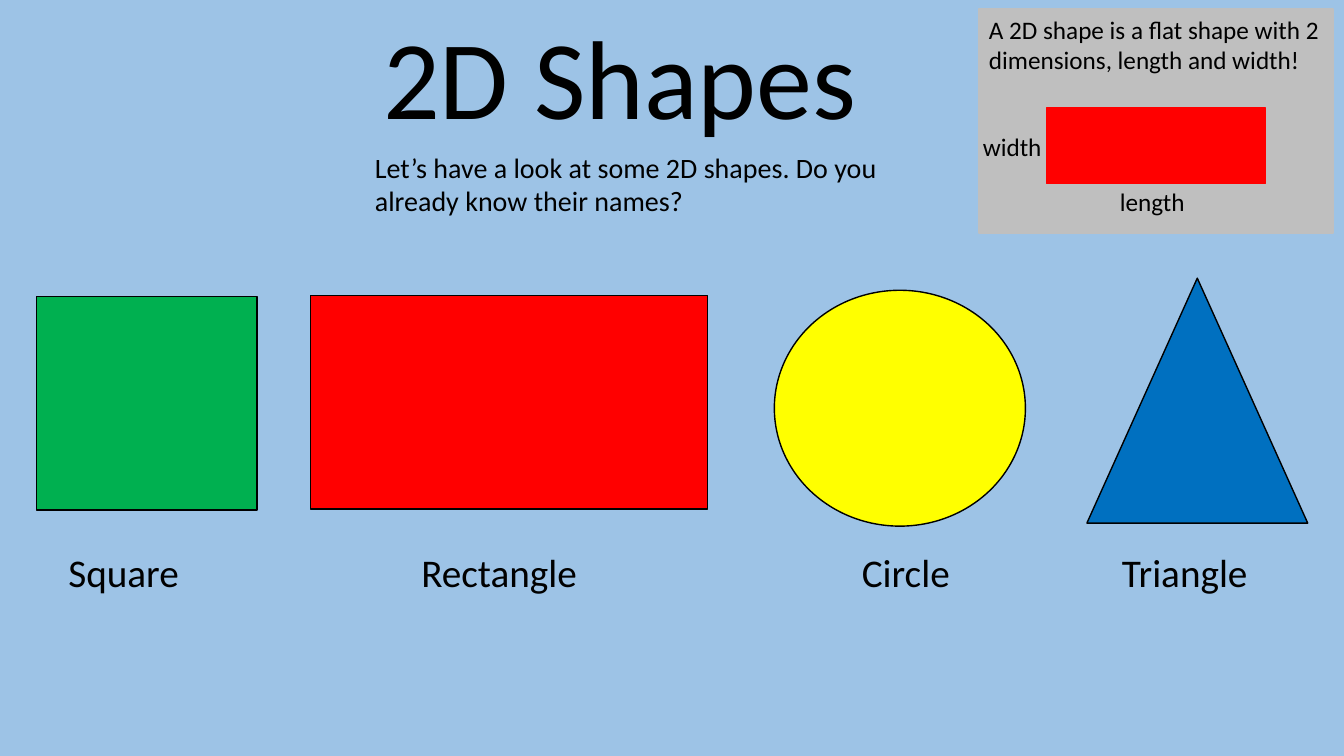
from dataclasses import dataclass

from pptx import Presentation
from pptx.dml.color import RGBColor
from pptx.enum.shapes import MSO_SHAPE
from pptx.enum.text import MSO_ANCHOR, MSO_AUTO_SIZE, PP_ALIGN
from pptx.util import Inches, Pt

RECT = MSO_SHAPE.RECTANGLE
OVAL = MSO_SHAPE.OVAL
TRIANGLE = MSO_SHAPE.ISOSCELES_TRIANGLE
TOP = MSO_ANCHOR.TOP
NO_FIT = MSO_AUTO_SIZE.NONE
LEFT, CENTER = PP_ALIGN.LEFT, PP_ALIGN.CENTER


@dataclass(frozen=True)
class Theme:
    font: str = "Calibri"
    back: str = "9DC3E6"
    panel: str = "BFBFBF"
    ink: str = "000000"
    red: str = "FF0000"
    green: str = "00B050"
    yellow: str = "FFFF00"
    blue: str = "0070C0"
    title: int = 80
    label: int = 28
    intro: int = 20
    note: int = 18
    line: int = 1


theme = Theme()

# Content: boxes are left, top, width, height in inches
TITLE = ("2D Shapes", (3.68, 0.02, 4.94, 1.45))
INTRO = ("Let’s have a look at some 2D shapes. Do you already know their names?",
         (3.62, 1.44, 5.6, 0.77))
PANEL = (9.71, 0.09, 3.51, 2.22)
SAMPLE = (10.38, 1.07, 2.17, 0.75)
NOTES = [
    ("A 2D shape is a flat shape with 2 dimensions, length and width!",
     (9.71, 0.09, 3.51, 0.71)),
    ("width", (9.65, 1.25, 1.3, 0.4)),
    ("length", (11.01, 1.8, 1.3, 0.4)),
]
# Name, outline, colour, box, label left, label width
FIGURES = [
    ("Square", RECT, theme.green, (0.36, 2.94, 2.19, 2.12), 0.58, 1.97),
    ("Rectangle", RECT, theme.red, (3.08, 2.93, 3.94, 2.12), 4.08, 2.58),
    ("Circle", OVAL, theme.yellow, (7.68, 2.88, 2.49, 2.34), 8.45, 1.26),
    ("Triangle", TRIANGLE, theme.blue, (10.78, 2.76, 2.19, 2.43), 11.03, 2.2),
]
LABEL_TOP, LABEL_HEIGHT = 5.39, 0.57


def color(code):
    return RGBColor.from_string(code)


def draw(slide, kind, box, fill, line):
    shape = slide.shapes.add_shape(kind, *map(Inches, box))
    shape.shadow.inherit = False
    shape.fill.solid()
    shape.fill.fore_color.rgb = color(fill)
    shape.line.color.rgb = color(line)
    shape.line.width = Pt(theme.line)


def fill_text(shape, text, size, align=LEFT, wrap=True):
    frame = shape.text_frame
    frame.text = text
    frame.word_wrap = wrap
    frame.auto_size = NO_FIT
    frame.vertical_anchor = TOP
    para = frame.paragraphs[0]
    para.alignment = align
    font = para.runs[0].font
    font.name = theme.font
    font.size = Pt(size)
    font.color.rgb = color(theme.ink)


def write(slide, text, box, size):
    fill_text(slide.shapes.add_textbox(*map(Inches, box)), text, size)


def main():
    deck = Presentation()
    deck.slide_width, deck.slide_height = Inches(13.33), Inches(7.5)
    slide = deck.slides.add_slide(deck.slide_layouts[5])
    slide.background.fill.solid()
    slide.background.fill.fore_color.rgb = color(theme.back)

    # Title and introduction
    text, box = TITLE
    title = slide.shapes.title
    title.left, title.top, title.width, title.height = map(Inches, box)
    fill_text(title, text, theme.title, CENTER, wrap=False)
    write(slide, *INTRO, theme.intro)

    # Definition panel
    draw(slide, RECT, PANEL, theme.panel, theme.panel)
    draw(slide, RECT, SAMPLE, theme.red, theme.red)
    for text, box in NOTES:
        write(slide, text, box, theme.note)

    # Named figures
    for name, kind, fill, box, left, width in FIGURES:
        draw(slide, kind, box, fill, theme.ink)
        write(slide, name, (left, LABEL_TOP, width, LABEL_HEIGHT), theme.label)

    deck.save("out.pptx")


if __name__ == "__main__":
    main()
